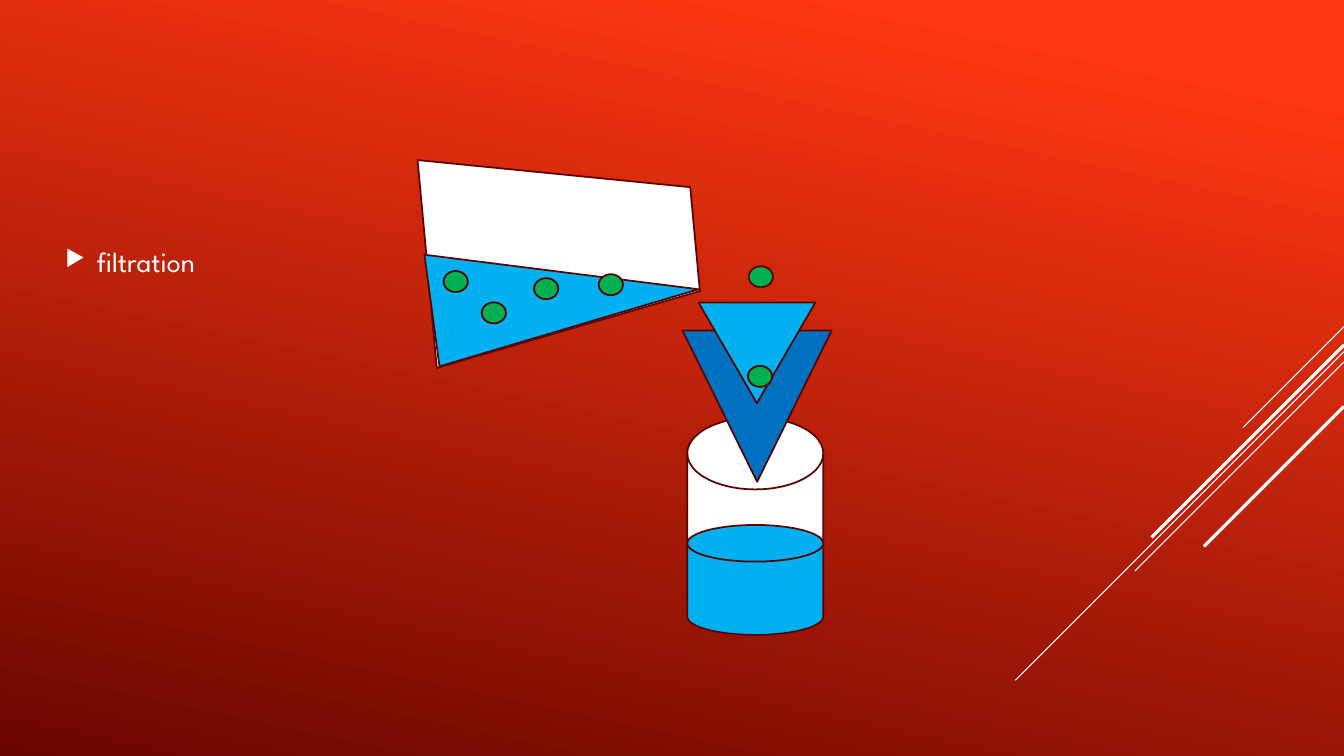
from dataclasses import dataclass

import lxml.etree
import pptx
import pptx.dml.color
import pptx.enum.shapes
import pptx.enum.text
import pptx.oxml.ns
import pptx.slide
import pptx.util

Cm = pptx.util.Cm
Pt = pptx.util.Pt
RGBColor = pptx.dml.color.RGBColor
Preset = pptx.enum.shapes.MSO_SHAPE
qn = pptx.oxml.ns.qn

WHITE = RGBColor(0xFF, 0xFF, 0xFF)
BRIGHT_RED = RGBColor(0xFF, 0x37, 0x12)
DARK_RED = RGBColor(0x6A, 0x06, 0x00)
OUTLINE = RGBColor(0x57, 0x04, 0x02)
WATER = RGBColor(0x00, 0xB0, 0xF0)
FUNNEL_BLUE = RGBColor(0x00, 0x70, 0xC0)
PARTICLE_GREEN = RGBColor(0x00, 0xB0, 0x50)

SLIDE_WIDTH = 33.87
SLIDE_HEIGHT = 19.05


@dataclass(frozen=True)
class Part:
    preset: Preset
    left: float
    top: float
    width: float
    height: float
    fill: RGBColor
    rotation: float = 0
    adjustment: float | None = None


@dataclass(frozen=True)
class Streak:
    top: float
    reach: float
    weight: float


STREAKS = [
    Streak(8.23, 2.54, 0.75),
    Streak(8.86, 8.28, 0.75),
    Streak(9.12, 5.27, 0.75),
    Streak(8.69, 4.85, 2.25),
    Streak(10.24, 3.53, 2.25),
]

APPARATUS = [
    Part(Preset.TRAPEZOID, 11.51, 2.95, 5.26, 6.78, WHITE, 84.7),
    Part(Preset.ISOSCELES_TRIANGLE, 12.8, 4.01, 2.84, 6.73, WATER, 82.3, 0.63),
    Part(Preset.FLOWCHART_MAGNETIC_DISK, 17.32, 10.52, 3.43, 5.44, WHITE),
    Part(Preset.FLOWCHART_MAGNETIC_DISK, 17.32, 13.23, 3.43, 2.77, WATER),
    Part(Preset.ISOSCELES_TRIANGLE, 17.2, 8.33, 3.76, 3.81, FUNNEL_BLUE, 180),
    Part(Preset.ISOSCELES_TRIANGLE, 17.6, 7.62, 2.95, 2.54, WATER, 180),
]

PARTICLES = [
    Part(Preset.OVAL, left, top, 0.61, 0.53, PARTICLE_GREEN)
    for left, top in [
        (18.87, 6.71),
        (11.18, 6.83),
        (12.14, 7.62),
        (13.46, 7.01),
        (15.09, 6.91),
        (18.85, 9.22),
    ]
]


def paint_background(slide: pptx.slide.Slide) -> None:
    fill = slide.background.fill
    fill.gradient()
    fill.gradient_angle = 258
    for stop, position, color in zip(
        fill.gradient_stops, (0.1, 1), (BRIGHT_RED, DARK_RED)
    ):
        stop.position = position
        stop.color.rgb = color


def draw_streak(slide: pptx.slide.Slide, streak: Streak) -> None:
    line = slide.shapes.add_connector(
        pptx.enum.shapes.MSO_CONNECTOR.STRAIGHT,
        Cm(SLIDE_WIDTH),
        Cm(streak.top),
        Cm(SLIDE_WIDTH - streak.reach),
        Cm(streak.top + streak.reach),
    )
    line.line.color.rgb = WHITE
    line.line.width = Pt(streak.weight)
    lxml.etree.SubElement(line._element.spPr, qn("a:effectLst"))


def draw_part(slide: pptx.slide.Slide, part: Part) -> None:
    shape = slide.shapes.add_shape(
        part.preset, Cm(part.left), Cm(part.top), Cm(part.width), Cm(part.height)
    )
    shape.rotation = part.rotation
    if part.adjustment is not None:
        shape.adjustments[0] = part.adjustment
    shape.shadow.inherit = False
    shape.fill.solid()
    shape.fill.fore_color.rgb = part.fill
    shape.line.color.rgb = OUTLINE
    shape.line.width = Pt(1.25)


def write_method(slide: pptx.slide.Slide) -> None:
    method = slide.shapes.add_textbox(Cm(1.4), Cm(1.57), Cm(23.7), Cm(10.03))
    frame = method.text_frame
    frame.word_wrap = True
    frame.vertical_anchor = pptx.enum.text.MSO_ANCHOR.MIDDLE
    paragraph = frame.paragraphs[0]
    paragraph.text = "filtration"
    properties = paragraph._p.get_or_add_pPr()
    properties.set("marL", str(Cm(0.79)))
    properties.set("indent", str(Cm(-0.79)))
    bullet_color = lxml.etree.SubElement(properties, qn("a:buClr"))
    lxml.etree.SubElement(bullet_color, qn("a:srgbClr"), val=str(WHITE))
    lxml.etree.SubElement(properties, qn("a:buSzPct"), val="80000")
    lxml.etree.SubElement(properties, qn("a:buChar"), char="▶")
    paragraph.space_after = Pt(6)
    paragraph.font.name = "League Spartan"
    paragraph.font.size = Pt(20)
    paragraph.font.color.rgb = WHITE


def main() -> None:
    presentation = pptx.Presentation()
    presentation.slide_width = Cm(SLIDE_WIDTH)
    presentation.slide_height = Cm(SLIDE_HEIGHT)
    slide = presentation.slides.add_slide(presentation.slide_layouts[6])
    paint_background(slide)
    for streak in STREAKS:
        draw_streak(slide, streak)
    write_method(slide)
    for part in APPARATUS + PARTICLES:
        draw_part(slide, part)
    presentation.save("out.pptx")


if __name__ == "__main__":
    main()
